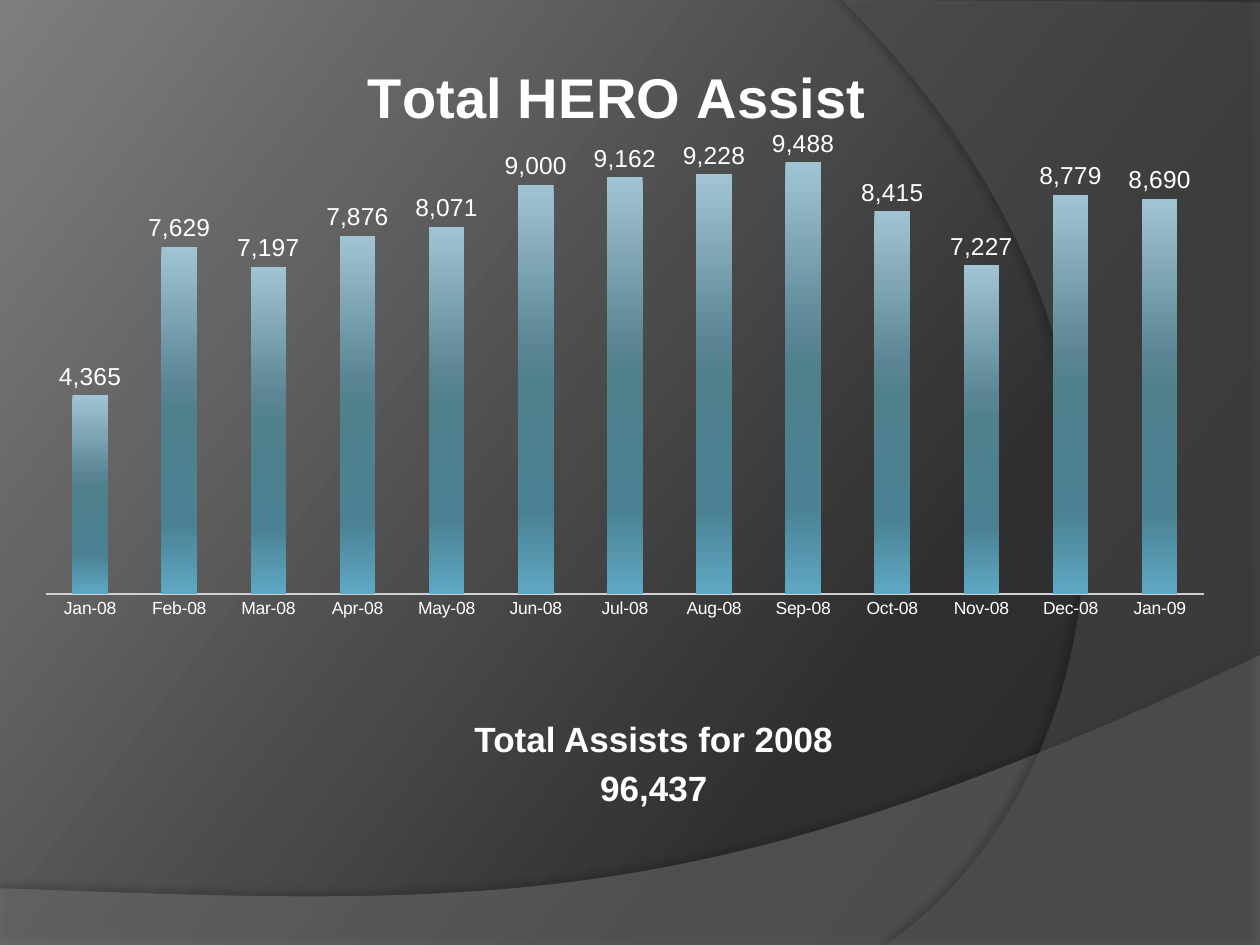
import copy
import lxml.etree
import pptx
import pptx.chart.data
import pptx.dml.color
import pptx.enum.chart
import pptx.enum.text
import pptx.oxml
import pptx.oxml.ns
import pptx.util

Pt = pptx.util.Pt
qn = pptx.oxml.ns.qn
rgb = pptx.dml.color.RGBColor.from_string
tint = {"white": "FFFFFF", "axis": "D0D0D0", "wave": "7F7F7F", "arc": "5E5E5E"}
back = [(0, "282828"), (30, "2F2F2F"), (100, "7E7E7E")]
bars = [(0, "A0C4D4"), (40, "5B8594"), (48, "50808C"), (80, "4A8294"), (100, "5FA8C4")]


def blend(fill, stops, angle):
    fill.gradient()
    fill.gradient_angle = angle
    first = fill.gradient_stops[0]
    first.color.rgb = rgb(stops[0][1])
    group = fill._fill._gradFill.find(qn("a:gsLst"))
    model = copy.deepcopy(group[0])
    for node in list(group):
        group.remove(node)
    for place, shade in stops:
        node = copy.deepcopy(model)
        node.set("pos", str(place * 1000))
        node[0].set("val", shade)
        group.append(node)


def curve(a, b, c, d, steps=60):
    for i in range(1, steps + 1):
        t = i / steps
        u = 1 - t
        yield tuple(u**3 * p + 3 * u * u * t * q + 3 * u * t * t * r + t**3 * s
                    for p, q, r, s in zip(a, b, c, d))


deck = pptx.Presentation()
deck.slide_width, deck.slide_height = Pt(720), Pt(540)
slide = deck.slides.add_slide(deck.slide_layouts[6])
blend(slide.background.fill, back, 143)

wave = [(0, 507.6), (0, 540), (720, 540), (720, 374.4)]
wave += curve((720, 374.4), (402.5, 524.9), (281.5, 517.7), (0, 507.6))
arc = [(720, 1.4), (720, 540), (506.2, 540)]
arc += curve((506.2, 540), (641.5, 445.7), (681.8, 198), (481, 0))
for name, dots, alpha, dark, gap, turn in [
    ("wave", wave, 45, 35, 3.5, 270),
    ("arc", arc, 40, 45, 4, 180),
]:
    dots = [(x * 100, y * 100) for x, y in dots]
    path = slide.shapes.build_freeform(*dots[0], scale=Pt(1) / 100)
    path.add_line_segments(dots[1:], close=True)
    shape = path.convert_to_shape()
    shape.fill.solid()
    shape.fill.fore_color.rgb = rgb(tint[name])
    shape.line.fill.background()
    shape.shadow.inherit = False
    props = shape._element.spPr
    hue = props.find(qn("a:solidFill"))[0]
    lxml.etree.SubElement(hue, qn("a:alpha"), val=str(alpha * 1000))
    glow = lxml.etree.SubElement(
        props.find(qn("a:effectLst")), qn("a:outerShdw"), blurRad=str(Pt(4)),
        dist=str(Pt(gap)), dir=str(turn * 60000), algn="ctr", rotWithShape="0")
    black = lxml.etree.SubElement(glow, qn("a:srgbClr"), val="000000")
    lxml.etree.SubElement(black, qn("a:alpha"), val=str(dark * 1000))

box = slide.shapes.add_textbox(Pt(144), Pt(372.24), Pt(455.76), Pt(90))
frame = box.text_frame
frame.word_wrap = True
frame.vertical_anchor = pptx.enum.text.MSO_ANCHOR.BOTTOM
frame.margin_left, frame.margin_right = Pt(7.2), Pt(3.6)
frame.margin_top = frame.margin_bottom = 0
frame.text = "Total Assists for 2008\n96,437"
for para in frame.paragraphs:
    para.alignment = pptx.enum.text.PP_ALIGN.CENTER
    para.font.name, para.font.size, para.font.bold = "Arial", Pt(20), True
    para.font.color.rgb = rgb(tint["white"])
frame.paragraphs[1].space_before = Pt(4)

months = "Jan Feb Mar Apr May Jun Jul Aug Sep Oct Nov Dec".split()
data = pptx.chart.data.CategoryChartData(number_format="#,##0")
data.categories = [month + "-08" for month in months] + ["Jan-09"]
data.add_series("Series 1", [4365, 7629, 7197, 7876, 8071, 9000, 9162,
                             9228, 9488, 8415, 7227, 8779, 8690])
chart = slide.shapes.add_chart(
    pptx.enum.chart.XL_CHART_TYPE.COLUMN_CLUSTERED,
    Pt(12.24), Pt(18), Pt(689.76), Pt(342), data).chart
chart.has_legend = False
chart.font.name, chart.font.size = "Arial", Pt(10)
chart.font.color.rgb = rgb(tint["white"])
chart.has_title = True
chart.chart_title.include_in_layout = False
head = chart.chart_title.text_frame
head.text = "Total HERO Assist "
font = head.paragraphs[0].font
font.name, font.size, font.bold = "Arial", Pt(32), True
font.color.rgb = rgb(tint["white"])

scale = chart.value_axis
scale.minimum_scale, scale.maximum_scale = 0, 10000
scale.has_major_gridlines = False
scale.visible = False
base = chart.category_axis
base.major_tick_mark = pptx.enum.chart.XL_TICK_MARK.NONE
base.format.line.color.rgb = rgb(tint["axis"])
base.format.line.width = Pt(0.75)

plot = chart.plots[0]
plot.gap_width = 150
plot.vary_by_categories = False
blend(plot.series[0].format.fill, bars, 270)
plot.has_data_labels = True
label = plot.data_labels
label.show_value = True
label.number_format, label.number_format_is_linked = "#,##0", False
label.position = pptx.enum.chart.XL_LABEL_POSITION.OUTSIDE_END
label.font.name, label.font.size = "Arial", Pt(14)
label.font.color.rgb = rgb(tint["white"])

area = chart._chartSpace.chart.plotArea
for old in area.findall(qn("c:layout")):
    area.remove(old)
layout = lxml.etree.Element(qn("c:layout"))
manual = lxml.etree.SubElement(layout, qn("c:manualLayout"))
for tag, value in [("layoutTarget", "inner"), ("xMode", "edge"), ("yMode", "edge"),
                   ("x", "0.02"), ("y", "0.18"), ("w", "0.96"), ("h", "0.76")]:
    lxml.etree.SubElement(manual, qn("c:" + tag), val=value)
area.insert(0, layout)

deck.save("out.pptx")
